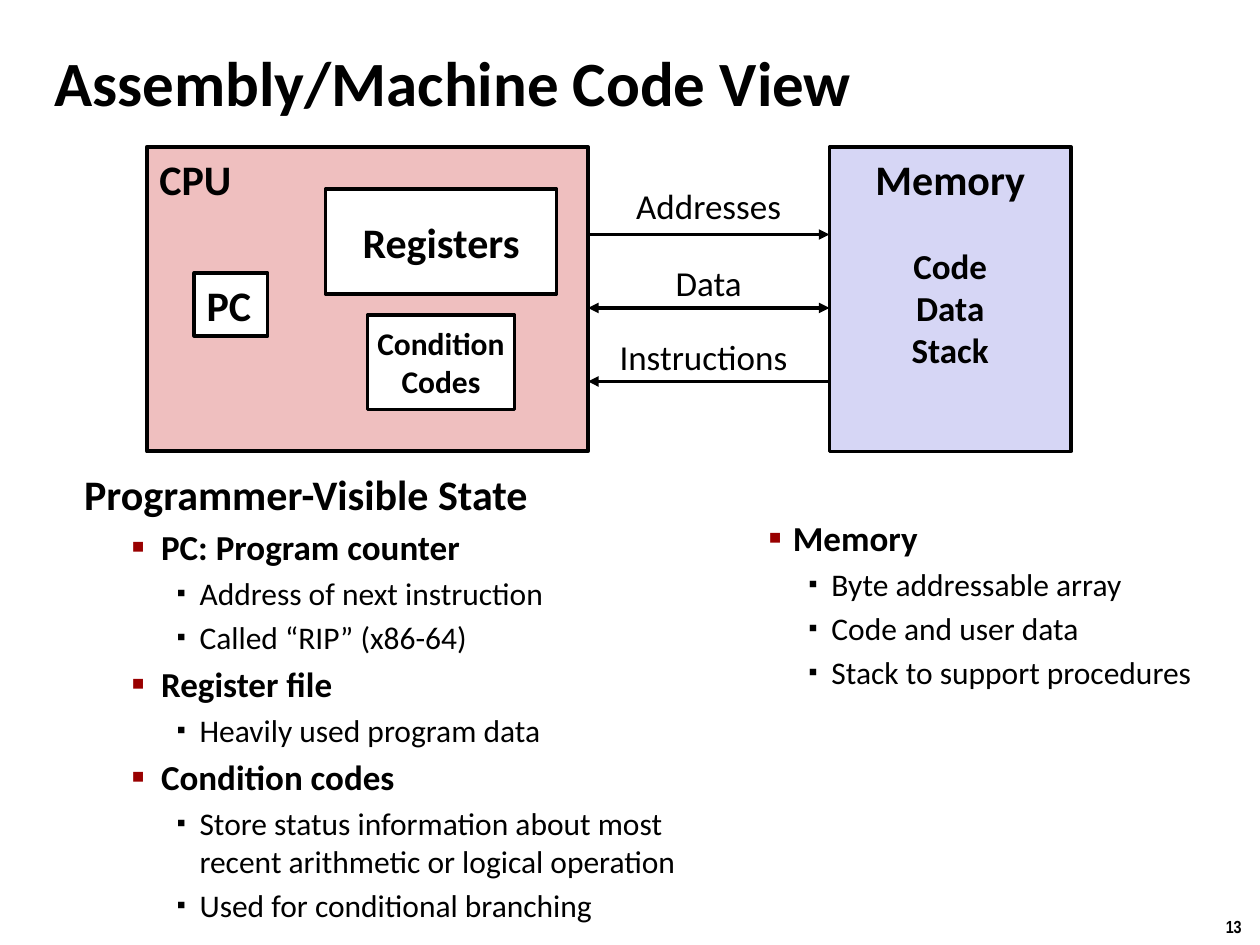
from dataclasses import dataclass
from lxml import etree
from pptx import Presentation, util as u
from pptx.dml.color import RGBColor
from pptx.enum import shapes, text
from pptx.oxml.ns import qn

LEFT, MID = text.PP_ALIGN.LEFT, text.PP_ALIGN.CENTER
TOP, CENTER = text.MSO_ANCHOR.TOP, text.MSO_ANCHOR.MIDDLE


@dataclass
class Theme:
    font: str = "Calibri"
    small: str = "Arial Narrow"
    ink: str = "000000"
    white: str = "FFFFFF"
    rose: str = "EFBFBF"
    lilac: str = "D6D6F5"
    mark: str = "990000"
    title: int = 36
    head: int = 24
    main: int = 20
    sub: int = 18
    page: int = 10


def color(code):
    return RGBColor.from_string(code)


def add(node, tag, **attrs):
    return etree.SubElement(node, qn(tag), **attrs)


class Deck:
    def __init__(self, theme):
        self.theme = theme
        self.file = Presentation()
        self.file.slide_width, self.file.slide_height = u.Pt(720), u.Pt(540)
        self.slide = self.file.slides.add_slide(self.file.slide_layouts[6])

    def run(self, para, words, size, bold, font=None):
        run = para.add_run()
        run.text = words
        run.font.name = font or self.theme.font
        run.font.size = u.Pt(size)
        run.font.bold = bold
        run.font.color.rgb = color(self.theme.ink)

    def fill(self, shape, lines, size, bold, align, anchor, wrap, font=None):
        frame = shape.text_frame
        frame.word_wrap = wrap
        frame.vertical_anchor = anchor
        for i, words in enumerate(lines):
            para = frame.add_paragraph() if i else frame.paragraphs[0]
            para.alignment = align
            self.run(para, words, size, bold, font)

    def box(self, area, tint, lines, size, align=MID, anchor=CENTER, width=2):
        shape = self.slide.shapes.add_shape(
            shapes.MSO_SHAPE.RECTANGLE, *map(u.Pt, area))
        shape.shadow.inherit = False
        shape.fill.solid()
        shape.fill.fore_color.rgb = color(tint)
        shape.line.color.rgb = color(self.theme.ink)
        shape.line.width = u.Pt(width)
        self.fill(shape, lines, size, True, align, anchor, False)

    def label(self, area, lines, size, bold=False, align=MID, anchor=TOP,
              wrap=True, font=None):
        shape = self.slide.shapes.add_textbox(*map(u.Pt, area))
        self.fill(shape, lines, size, bold, align, anchor, wrap, font)

    def arrow(self, left, right, y, ends):
        line = self.slide.shapes.add_connector(
            shapes.MSO_CONNECTOR.STRAIGHT, *map(u.Pt, (left, y, right, y)))
        line.line.color.rgb = color(self.theme.ink)
        line.line.width = u.Pt(2)
        for end in ends:
            add(line.line._get_or_add_ln(), f"a:{end}End", type="triangle")
        add(line._element.spPr, "a:effectLst")

    def outline(self, area, items, indents):
        t = self.theme
        looks = [(t.head, True, None, None), (t.main, True, t.mark, 110),
                 (t.sub, False, t.ink, 80)]
        frame = self.slide.shapes.add_textbox(*map(u.Pt, area)).text_frame
        frame.word_wrap = True
        for i, (level, words) in enumerate(items):
            size, bold, tint, scale = looks[level]
            para = frame.add_paragraph() if i else frame.paragraphs[0]
            para.level = level
            props = para._p.get_or_add_pPr()
            left, hang = indents[level]
            props.set("marL", str(u.Pt(left)))
            props.set("indent", str(u.Pt(-hang)))
            add(add(props, "a:spcBef"), "a:spcPct", val="20000")
            if tint:
                add(add(props, "a:buClr"), "a:srgbClr", val=tint)
                add(props, "a:buSzPct", val=str(scale * 1000))
                add(props, "a:buFont", typeface=t.font)
                add(props, "a:buChar", char="▪")
            self.run(para, words, size, bold)


def main():
    t = Theme()
    deck = Deck(t)
    deck.label((690, 520, 30, 19), ["13"], t.page, True, wrap=False, font=t.small)
    deck.label((24, 24, 569, 45), ["Assembly/Machine Code View"], t.title, True,
               LEFT, CENTER)

    deck.box((84, 84, 252, 174), t.rose, ["CPU"], t.head, LEFT, TOP, 2.25)
    deck.box((111, 156, 42, 36), t.white, ["PC"], t.head, LEFT)
    deck.box((186, 108, 132, 60), t.white, ["Registers"], t.head)
    deck.box((210, 180, 84, 54), t.white, ["Condition", "Codes"], t.sub)
    deck.box((474, 84, 138, 174), t.lilac, ["Memory"], t.head, anchor=TOP)
    deck.label((498, 136, 90, 80), ["Code", "Data", "Stack"], t.main, True)

    buses = [("Addresses", 102, 138, ["tail"]),
             ("Data", 146, 138, ["head", "tail"]),
             ("Instructions", 188, 132, ["head"])]
    for i, (name, top, width, ends) in enumerate(buses):
        deck.arrow(336, 474, 134 + 42 * i, ends)
        deck.label((336, top, width, 31), [name], t.main)

    deck.outline((41, 264, 382, 243), [
        (0, "Programmer-Visible State"),
        (1, "PC: Program counter"),
        (2, "Address of next instruction"),
        (2, "Called “RIP” (x86-64)"),
        (1, "Register file"),
        (2, "Heavily used program data"),
        (1, "Condition codes"),
        (2, "Store status information about most recent arithmetic or "
            "logical operation"),
        (2, "Used for conditional branching"),
    ], [(18, 18), (44, 17), (66, 13)])
    deck.outline((423, 291.5, 285, 124), [
        (1, "Memory"),
        (2, "Byte addressable array"),
        (2, "Code and user data"),
        (2, "Stack to support procedures"),
    ], [(0, 0), (23, 14), (45, 13)])
    deck.file.save("out.pptx")


if __name__ == "__main__":
    main()
